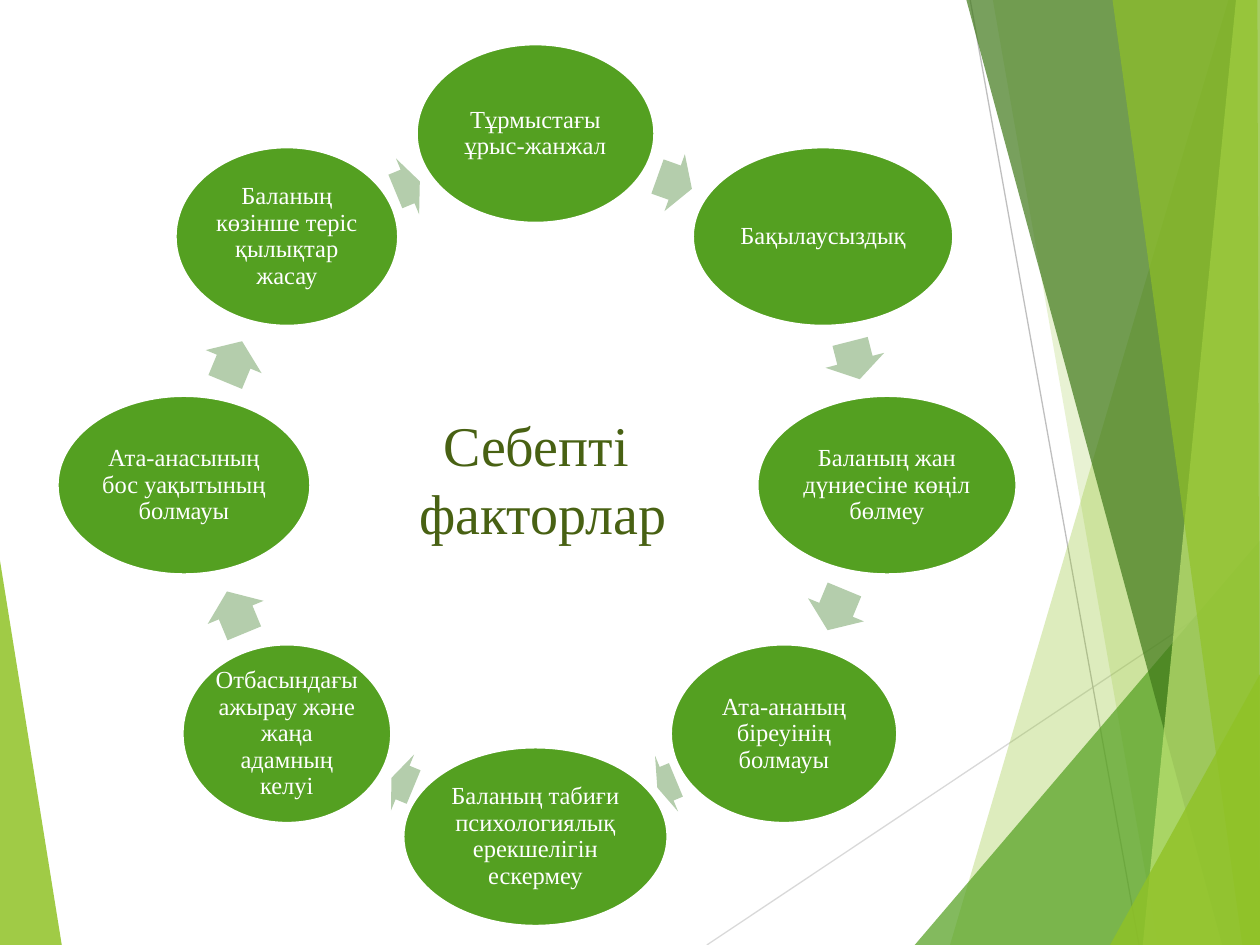
import math

import pptx
import pptx.util
from lxml import etree
from pptx.dml.color import RGBColor
from pptx.enum.shapes import MSO_CONNECTOR, MSO_SHAPE
from pptx.enum.text import MSO_ANCHOR, PP_ALIGN
from pptx.oxml.ns import qn

LIME = RGBColor(0x90, 0xC2, 0x26)
PALE_LIME = RGBColor(0xC0, 0xE4, 0x74)
GREEN = RGBColor(0x54, 0xA0, 0x21)
DARK_GREEN = RGBColor(0x3F, 0x78, 0x19)
SAGE = RGBColor(0xB4, 0xCD, 0xAC)
OLIVE = RGBColor(0x48, 0x61, 0x13)
GREY = RGBColor(0xBF, 0xBF, 0xBF)
LIGHT_GREY = RGBColor(0xD9, 0xD9, 0xD9)
WHITE = RGBColor(0xFF, 0xFF, 0xFF)

COLS, ROWS = 100, 75


class Deck:
    """Holds the style and the current slide; lengths are grid columns and rows."""

    font = "Times New Roman"

    def __init__(self):
        self.prs = pptx.Presentation()
        self.prs.slide_width = pptx.util.Inches(10)
        self.prs.slide_height = pptx.util.Inches(7.5)
        self.s = self.prs.slides.add_slide(self.prs.slide_layouts[5])

    def x(self, cols):
        return round(self.prs.slide_width * cols / COLS)

    def y(self, rows):
        return round(self.prs.slide_height * rows / ROWS)

    def format_text(self, tf, size, color):
        tf.word_wrap = True
        tf.vertical_anchor = MSO_ANCHOR.MIDDLE
        for p in tf.paragraphs:
            p.alignment = PP_ALIGN.CENTER
            p.font.name = self.font
            p.font.size = pptx.util.Pt(size)
            p.font.color.rgb = color

    def title(self, text, left, top, width, height):
        sp = self.s.shapes.title
        sp.left, sp.top = self.x(left), self.y(top)
        sp.width, sp.height = self.x(width), self.y(height)
        sp.text_frame.text = text
        self.format_text(sp.text_frame, 32, OLIVE)

    def facet(self, points, color, opacity):
        corners = [(self.x(col), self.y(row)) for col, row in points]
        builder = self.s.shapes.build_freeform(*corners[0])
        builder.add_line_segments(corners[1:], close=True)
        sp = builder.convert_to_shape()
        sp.shadow.inherit = False
        sp.line.fill.background()
        sp.fill.solid()
        sp.fill.fore_color.rgb = color
        clr = sp.fill._xPr.find(qn("a:solidFill"))[0]
        etree.SubElement(clr, qn("a:alpha")).set("val", str(opacity * 1000))

    def line(self, start, end, color):
        c = self.s.shapes.add_connector(
            MSO_CONNECTOR.STRAIGHT, self.x(start[0]), self.y(start[1]),
            self.x(end[0]), self.y(end[1]))
        c.line.color.rgb = color
        c.line.width = pptx.util.Pt(0.75)
        etree.SubElement(c._element.spPr, qn("a:effectLst"))

    def centred(self, kind, cx, cy, width, height, color):
        sp = self.s.shapes.add_shape(
            kind, self.x(cx - width / 2), self.y(cy - height / 2),
            self.x(width), self.y(height))
        sp.shadow.inherit = False
        sp.fill.solid()
        sp.fill.fore_color.rgb = color
        return sp

    def oval(self, text, cx, cy, width, height):
        sp = self.centred(MSO_SHAPE.OVAL, cx, cy, width, height, GREEN)
        sp.line.color.rgb = WHITE
        sp.line.width = pptx.util.Pt(1.5)
        tf = sp.text_frame
        tf.margin_left = tf.margin_right = self.x(0.2)
        tf.margin_top = tf.margin_bottom = self.y(0.2)
        tf.text = text
        tf.paragraphs[0].line_spacing = 0.9
        self.format_text(tf, 14, WHITE)

    def arrow(self, cx, cy, width, height, rotation):
        sp = self.centred(MSO_SHAPE.RIGHT_ARROW, cx, cy, width, height, SAGE)
        sp.line.fill.background()
        sp.adjustments[0], sp.adjustments[1] = 0.6, 0.5
        sp.rotation = rotation


# Background facets: outline, colour, opacity in percent
LEFT_FACET = ([(0, 44.5), (4.9, 75), (0, 75)], LIME, 85)
RIGHT_FACETS = [
    ([(97.5, 0), (75.4, 75), (100, 75), (100, 0)], LIME, 30),
    ([(78.8, 0), (91.9, 75), (100, 75), (100, 0)], LIME, 20),
    ([(72.6, 75), (100, 42.9), (100, 75)], GREEN, 72),
    ([(76.7, 0), (97, 75), (100, 75), (100, 0)], DARK_GREEN, 70),
    ([(98.1, 0), (90.7, 75), (100, 75), (100, 0)], PALE_LIME, 70),
    ([(88.3, 0), (98.6, 75), (100, 75), (99.8, 0)], LIME, 65),
    ([(88.1, 75), (100, 53.5), (100, 75)], LIME, 80),
]

# Ring of factors, clockwise from the top: text, oval width, sideways shift
CENTRE_X, CENTRE_Y, RADIUS = 42.5, 38.5, 27.9
OVAL_HEIGHT, ARROW_HEIGHT = 14.2, 4.8
FACTORS = [
    ("Тұрмыстағы ұрыс-жанжал", 18.9, 0),
    ("Бақылаусыздық", 20.7, 3.1),
    ("Баланың жан дүниесіне көңіл бөлмеу", 20.6, 0),
    ("Ата-ананың біреуінің болмауы", 18, 0),
    ("Баланың табиғи психологиялық ерекшелігін ескермеу", 21, 0),
    ("Отбасындағы ажырау және жаңа адамның келуі", 16.6, 0),
    ("Ата-анасының бос уақытының болмауы", 20.1, 0),
    ("Баланың көзінше теріс қылықтар жасау", 17.7, 0),
]
# Arrow after each factor: centre, width, turn away from the ring's tangent
ARROWS = [
    (53.55, 14.5, 2.9, -2.8), (67.85, 28.6, 3.1, 8.2),
    (66.35, 48.4, 3.5, 0), (52.9, 62.2, 1.6, 0),
    (31.95, 62.1, 1.9, 0), (18.7, 48.6, 3.6, 0),
    (18.55, 28.7, 3.5, 0), (32.35, 14.8, 2.1, 0),
]


def main():
    deck = Deck()

    # Background
    deck.facet(*LEFT_FACET)
    deck.line((56.1, 75), (100, 45.7), LIGHT_GREY)
    deck.line((77, 0), (90.4, 75), GREY)
    for facet in RIGHT_FACETS:
        deck.facet(*facet)

    # Ring of factors and arrows
    step = 360 / len(FACTORS)
    for i, (factor, arrow) in enumerate(zip(FACTORS, ARROWS)):
        text, width, shift = factor
        angle = math.radians(i * step)
        deck.oval(text, CENTRE_X + RADIUS * math.sin(angle) + shift,
                  CENTRE_Y - RADIUS * math.cos(angle), width, OVAL_HEIGHT)
        cx, cy, length, turn = arrow
        deck.arrow(cx, cy, length, ARROW_HEIGHT, (i + 0.5) * step + turn)

    # Title in the middle of the ring
    deck.title("Себепті \vфакторлар", 32.1, 32.4, 22, 11.1)
    deck.prs.save("out.pptx")


if __name__ == "__main__":
    main()
